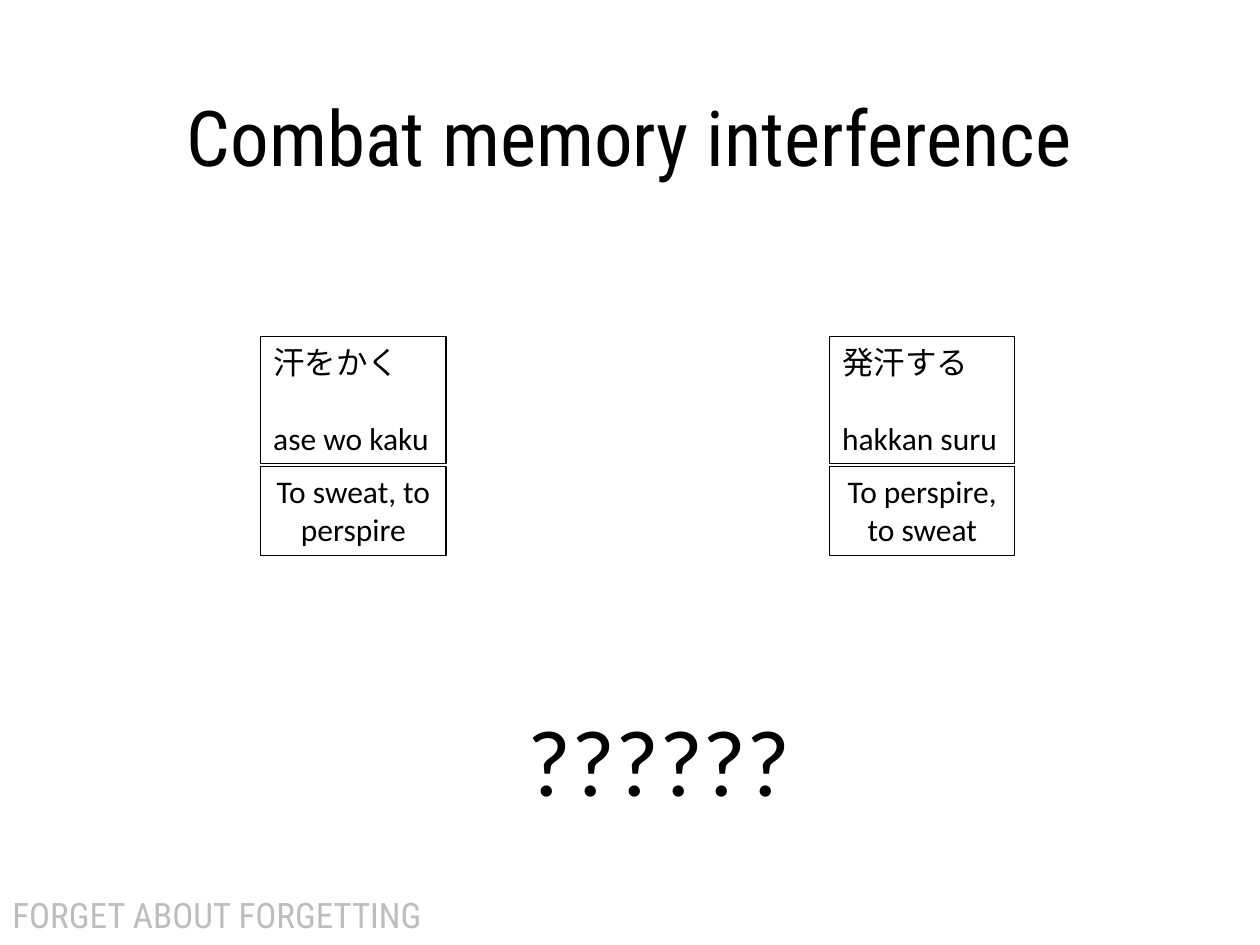
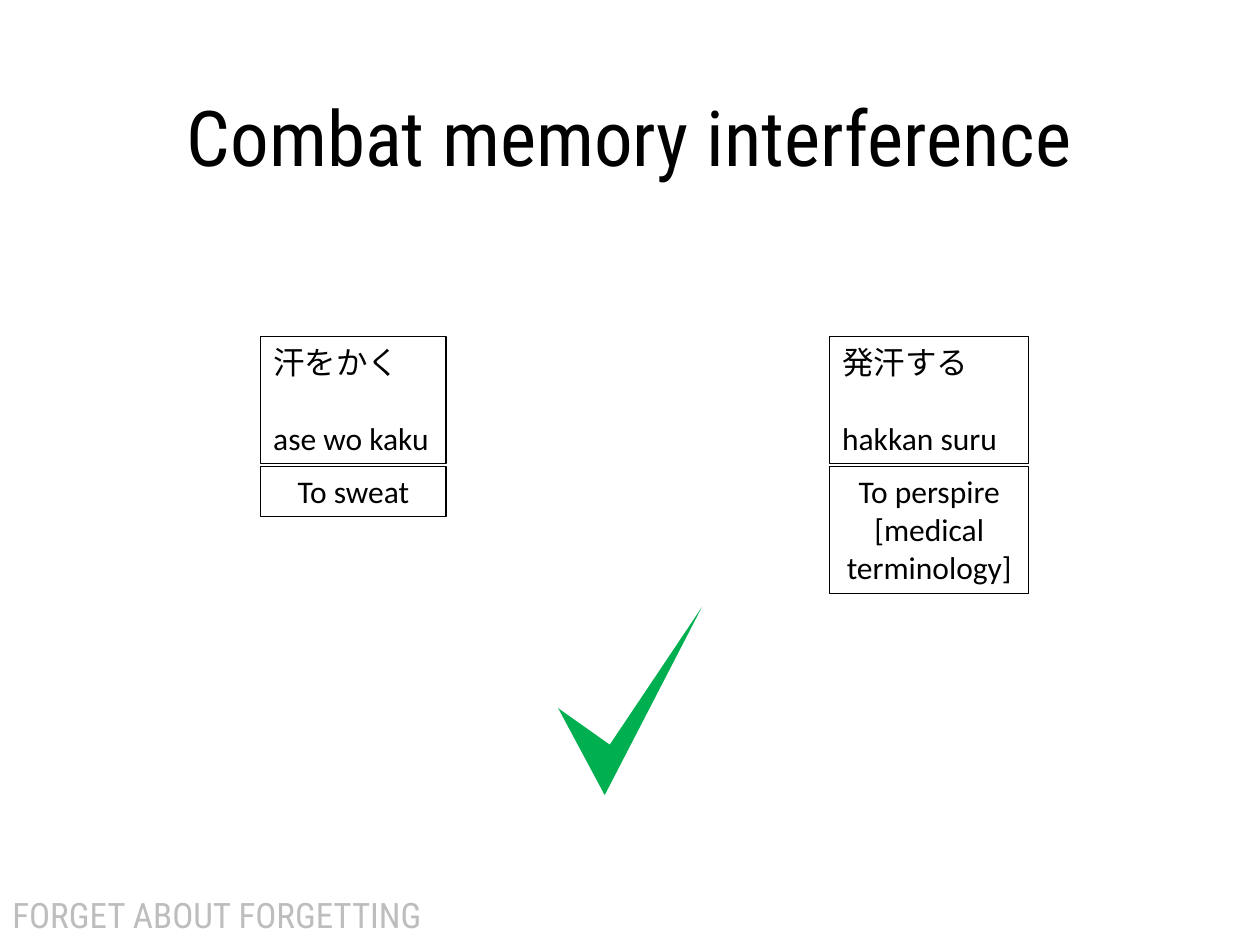
from pptx import Presentation
from pptx import util as u
from pptx.dml import color
from pptx.enum import shapes, text

LEFT, MID = text.PP_ALIGN.LEFT, text.PP_ALIGN.CENTER
TOP = text.MSO_ANCHOR.TOP


def rgb(code):
    return color.RGBColor.from_string(code)


class Deck:
    ink, pale, green = "000000", "BDBDBD", "00B050"
    head, body = "Roboto Condensed", "Calibri"
    cols, rows = 100, 75

    def __init__(self):
        self.file = Presentation()
        self.file.slide_width = u.Inches(10)
        self.file.slide_height = u.Inches(7.5)
        self.slide = None

    def spot(self, col, row):
        return (round(self.file.slide_width * col / self.cols),
                round(self.file.slide_height * row / self.rows))

    def area(self, col, row, wide, high):
        return *self.spot(col, row), *self.spot(wide, high)

    def words(self, shape, lines, size, face, tint=ink, align=LEFT,
              anchor=TOP, pitch=1.0, gap=0):
        frame = shape.text_frame
        frame.word_wrap = True
        frame.auto_size = text.MSO_AUTO_SIZE.NONE
        frame.vertical_anchor = anchor
        frame.text = "\n".join(lines)
        for index, para in enumerate(frame.paragraphs):
            para.alignment = align
            para.line_spacing = pitch
            para.space_before = u.Pt(gap if index else 0)
            para.font.size = u.Pt(size)
            para.font.name = face
            para.font.color.rgb = rgb(tint)

    def page(self, title, foot):
        self.slide = self.file.slides.add_slide(self.file.slide_layouts[5])
        self.label(0, 70.8, 100, 4.2, foot, 20, face=self.head,
                   tint=self.pale, pitch=0.9)
        name = self.slide.shapes.title
        name.left, name.top, name.width, name.height = self.area(6.9, 4, 86.2, 14.5)
        self.words(name, [title], 44, self.head, align=MID,
                   anchor=text.MSO_ANCHOR.MIDDLE, pitch=0.9)

    def label(self, col, row, wide, high, line, size, face=body, **style):
        box = self.slide.shapes.add_textbox(*self.area(col, row, wide, high))
        self.words(box, [line], size, face, **style)

    def box(self, col, row, wide, high, lines, **style):
        box = self.slide.shapes.add_shape(
            shapes.MSO_SHAPE.RECTANGLE, *self.area(col, row, wide, high))
        box.shadow.inherit = False
        box.fill.background()
        box.line.color.rgb = rgb(self.ink)
        box.line.width = u.Pt(0.75)
        self.words(box, lines, 18, self.body, **style)

    def card(self, col, wide, front, back, high):
        self.box(col, 26.7, wide, 10.1, front, gap=22)
        self.box(col, 37, wide, high, back, align=MID)

    def tick(self, *points):
        start, *rest = [self.spot(*point) for point in points]
        build = self.slide.shapes.build_freeform(*start)
        build.add_line_segments(rest, close=True)
        mark = build.convert_to_shape()
        mark.shadow.inherit = False
        mark.fill.solid()
        mark.fill.fore_color.rgb = rgb(self.green)
        mark.line.fill.background()


def main():
    deck = Deck()
    title, foot = "Combat memory interference", "FORGET ABOUT FORGETTING"
    plain = ["汗をかく", "ase wo kaku"]
    formal = ["発汗する", "hakkan suru"]
    left, right, wide = 20.7, 65.85, 14.7

    deck.page(title, foot)
    deck.card(left, wide, plain, ["To sweat, to perspire"], 7.1)
    deck.card(right, wide, formal, ["To perspire, to sweat"], 7.1)
    deck.label(40.9, 55.2, 23.1, 10.1, "??????", 54)

    deck.page(title, foot)
    deck.card(left, wide, plain, ["To sweat"], 4)
    deck.card(right, 15.8, formal, ["To perspire", "[medical terminology]"], 10.1)
    deck.tick((44.3, 56.2), (48, 63.1), (55.7, 48.2), (48.4, 59.1))

    deck.file.save("out.pptx")


if __name__ == "__main__":
    main()
